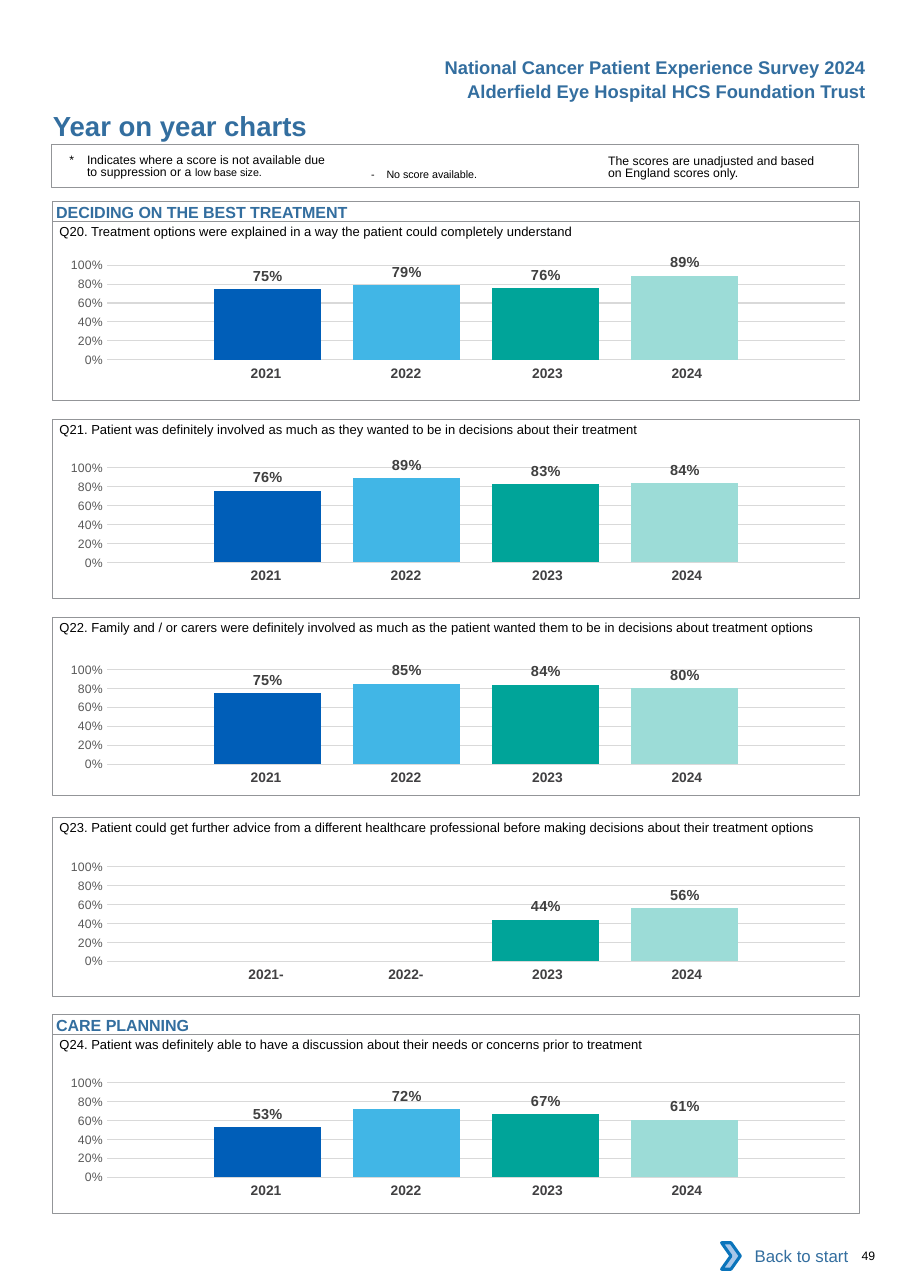
from dataclasses import dataclass

from lxml.etree import SubElement
from pptx import Presentation
from pptx.chart.data import CategoryChartData
from pptx.dml.color import RGBColor
from pptx.enum.chart import XL_CHART_TYPE, XL_LABEL_POSITION, XL_TICK_MARK
from pptx.enum.shapes import MSO_SHAPE
from pptx.enum.text import MSO_ANCHOR, PP_ALIGN
from pptx.oxml.ns import qn
from pptx.util import Inches, Pt


@dataclass(frozen=True)
class Theme:
    font: str = "Arial"
    base: str = "Calibri"
    black: str = "000000"
    blue: str = "336E9F"
    frame: str = "939598"
    year: str = "414042"
    label: str = "404040"
    axis: str = "595959"
    grid: str = "D9D9D9"
    white: str = "FFFFFF"
    arrow: str = "A8C7E9"
    edge: str = "0A74BB"
    bars: tuple = ("005EB8", "41B6E6", "00A499", "9CDCD7")
    title: float = 18
    head: float = 12
    link: float = 11
    band: float = 10.5
    value: float = 9.5
    cell: float = 9
    body: float = 8.5
    note: float = 8
    small: float = 7


THEME = Theme()
LEFT, WIDE = 0.48, 7.32
YEARS = ("2021", "2022", "2023", "2024")

# Question, frame top, chart top, score for each year
PANELS = (
    ("Q20. Treatment options were explained in a way the patient could "
     "completely understand", 2.01, 2.22, (0.75, 0.79, 0.76, 0.89)),
    ("Q21. Patient was definitely involved as much as they wanted to be in "
     "decisions about their treatment", 3.81, 4.06, (0.76, 0.89, 0.83, 0.84)),
    ("Q22. Family and / or carers were definitely involved as much as the "
     "patient wanted them to be in decisions about treatment options",
     5.6, 5.89, (0.75, 0.85, 0.84, 0.8)),
    ("Q23. Patient could get further advice from a different healthcare "
     "professional before making decisions about their treatment options",
     7.42, 7.68, (None, None, 0.44, 0.56)),
    ("Q24. Patient was definitely able to have a discussion about their needs "
     "or concerns prior to treatment", 9.39, 9.64, (0.53, 0.72, 0.67, 0.61)),
)


def color(code):
    return RGBColor.from_string(code)


def style(font, size, code, bold=False):
    font.name, font.size, font.bold = THEME.font, Pt(size), bold
    font.color.rgb = color(code)


def inset(frame, left=0, top=0, right=0, low=0):
    frame.margin_left, frame.margin_top = Inches(left), Inches(top)
    frame.margin_right, frame.margin_bottom = Inches(right), Inches(low)


def add_text(slide, box, text, size, code=THEME.black, bold=False, pad=(), align=PP_ALIGN.LEFT):
    frame = slide.shapes.add_textbox(*map(Inches, box)).text_frame
    frame.word_wrap = True
    inset(frame, *pad)
    para = frame.paragraphs[0]
    para.text, para.alignment = text, align
    style(para.font, size, code, bold)
    return para


def hang(para, depth):
    props = para._p.get_or_add_pPr()
    props.set("marL", str(Inches(depth)))
    props.set("indent", str(-Inches(depth)))


def add_box(slide, box, line=None, width=0.5, fill=None, kind=MSO_SHAPE.RECTANGLE):
    shape = slide.shapes.add_shape(kind, *map(Inches, box))
    shape.shadow.inherit = False
    if fill:
        shape.fill.solid()
        shape.fill.fore_color.rgb = color(fill)
    else:
        shape.fill.background()
    if line:
        shape.line.color.rgb = color(line)
        shape.line.width = Pt(width)
    else:
        shape.line.fill.background()
    return shape


def write(shape, text, size, align, anchor):
    frame = shape.text_frame
    frame.vertical_anchor = anchor
    para = frame.paragraphs[0]
    para.text, para.alignment = text, align
    style(para.font, size, THEME.blue, size == THEME.band)


def add_band(slide, top, text):
    shape = add_box(slide, (LEFT, top, WIDE, 0.18), THEME.frame)
    inset(shape.text_frame, 0.03, 0.01)
    write(shape, text, THEME.band, PP_ALIGN.LEFT, MSO_ANCHOR.TOP)


def add_years(slide, top, names):
    widths = (1.27, 1.27, 1.34, 1.27)
    box = (1.73, top, sum(widths), 0.27)
    table = slide.shapes.add_table(1, len(names), *map(Inches, box)).table
    table.first_row = table.horz_banding = False
    # Plain style: no grid and no fill
    mark = table._tbl.tblPr.find(qn("a:tableStyleId"))
    mark.text = "{2D5ABB26-0587-4C30-8999-92F81FD0307C}"
    for col, (name, width, right) in enumerate(zip(names, widths, (0, 0, 0.04, 0.12))):
        table.columns[col].width = Inches(width)
        cell = table.cell(0, col)
        cell.fill.background()
        inset(cell, 0.1, 0.05, right, 0.05)
        para = cell.text_frame.paragraphs[0]
        para.text, para.alignment = name, PP_ALIGN.CENTER
        style(para.font, THEME.cell, THEME.year, True)


def set_plot(chart, x, y, w, h):
    area = chart._chartSpace.chart.plotArea
    for old in area.findall(qn("c:layout")):
        area.remove(old)
    layout = SubElement(area, qn("c:layout"))
    area.insert(0, layout)
    manual = SubElement(layout, qn("c:manualLayout"))
    for tag, val in (("layoutTarget", "inner"), ("xMode", "edge"), ("yMode", "edge"),
                     ("x", x), ("y", y), ("w", w), ("h", h)):
        SubElement(manual, qn(f"c:{tag}")).set("val", str(val))


def add_bars(slide, top, scores):
    data = CategoryChartData(number_format="0%")
    data.categories = ["1"]
    for num, score in enumerate(scores, 1):
        data.add_series(f"Series {num}", [score])
    box = (0.39, top, WIDE, 1.29)
    chart = slide.shapes.add_chart(XL_CHART_TYPE.COLUMN_CLUSTERED, *map(Inches, box), data).chart
    chart.has_title = chart.has_legend = False
    chart.font.name, chart.font.size = THEME.base, Pt(10)
    chart.font.color.rgb = color(THEME.black)
    set_plot(chart, 0.08, 0.145, 0.915, 0.666)

    # Axes
    chart.category_axis.visible = False
    axis = chart.value_axis
    axis.minimum_scale, axis.maximum_scale, axis.major_unit = 0, 1, 0.2
    axis.major_tick_mark = axis.minor_tick_mark = XL_TICK_MARK.NONE
    axis.format.line.fill.background()
    grid = axis.major_gridlines.format.line
    grid.color.rgb, grid.width = color(THEME.grid), Pt(0.75)
    ticks = axis.tick_labels
    ticks.number_format, ticks.number_format_is_linked = "0%", False
    style(ticks.font, THEME.note, THEME.axis)

    # Columns and their labels
    plot = chart.plots[0]
    plot.gap_width, plot.overlap, plot.vary_by_categories = 200, -30, False
    for series, code in zip(plot.series, THEME.bars):
        series.format.fill.solid()
        series.format.fill.fore_color.rgb = color(code)
        labels = series.data_labels
        labels.show_value, labels.position = True, XL_LABEL_POSITION.OUTSIDE_END
        labels.number_format, labels.number_format_is_linked = "0%", False
        style(labels.font, THEME.value, THEME.label, True)


def add_panel(slide, text, top, start, scores):
    names = [year if score is not None else f"{year}-" for year, score in zip(YEARS, scores)]
    add_years(slide, start + 1.05, names)
    add_bars(slide, start, scores)
    add_box(slide, (LEFT, top, WIDE, 1.62), THEME.frame)
    add_text(slide, (0.54, top - 0.07, 7.26, 0.24), text, THEME.body, pad=(0, 0.09))


def add_key(slide):
    add_box(slide, (0.47, 1.31, WIDE, 0.39), THEME.frame, 0.75)
    star = add_text(slide, (0.63, 1.37, 2.38, 0.27), "*\tIndicates where a score is not "
                    "available due to suppression or a ", THEME.note, pad=(0, 0.03))
    run = star.add_run()
    run.text, run.font.size = "low base size.", Pt(THEME.small)
    hang(star, 0.16)
    dash = add_text(slide, (3.27, 1.47, 1.83, 0.24), "-\tNo score available.",
                    THEME.small, pad=(0.1, 0.05))
    hang(dash, 0.14)
    scope = add_text(slide, (5.52, 1.38, 2.01, 0.27), "The scores are unadjusted and based "
                     "on England scores only.", THEME.note, pad=(0, 0.03))
    star.line_spacing = scope.line_spacing = Pt(8.1)


def main():
    deck = Presentation()
    deck.slide_width, deck.slide_height = Inches(8.26), Inches(11.69)
    slide = deck.slides.add_slide(deck.slide_layouts[6])

    # Header
    for top, text in ((0.46, "National Cancer Patient Experience Survey 2024"),
                      (0.68, "Alderfield Eye Hospital HCS Foundation Trust")):
        add_text(slide, (3.76, top, 4.2, 0.3), text, THEME.head, THEME.blue, True,
                 (0.1, 0.05, 0.1, 0.05), PP_ALIGN.RIGHT)
    add_text(slide, (LEFT, 0.99, 4.5, 0.3), "Year on year charts", THEME.title, THEME.blue, True)
    add_key(slide)

    # Sections and charts
    add_band(slide, 1.83, "DECIDING ON THE BEST TREATMENT")
    add_band(slide, 9.21, "CARE PLANNING")
    for panel in PANELS:
        add_panel(slide, *panel)

    # Footer
    back = add_box(slide, (6.62, 11.19, 1.18, 0.42), fill=THEME.white)
    write(back, "Back to start", THEME.link, PP_ALIGN.RIGHT, MSO_ANCHOR.MIDDLE)
    add_box(slide, (6.55, 11.28, 0.17, 0.24), THEME.edge, 2, THEME.arrow, MSO_SHAPE.CHEVRON)
    add_text(slide, (7.82, 11.33, 0.41, 0.13), "49", THEME.note)
    deck.save("out.pptx")


if __name__ == "__main__":
    main()
